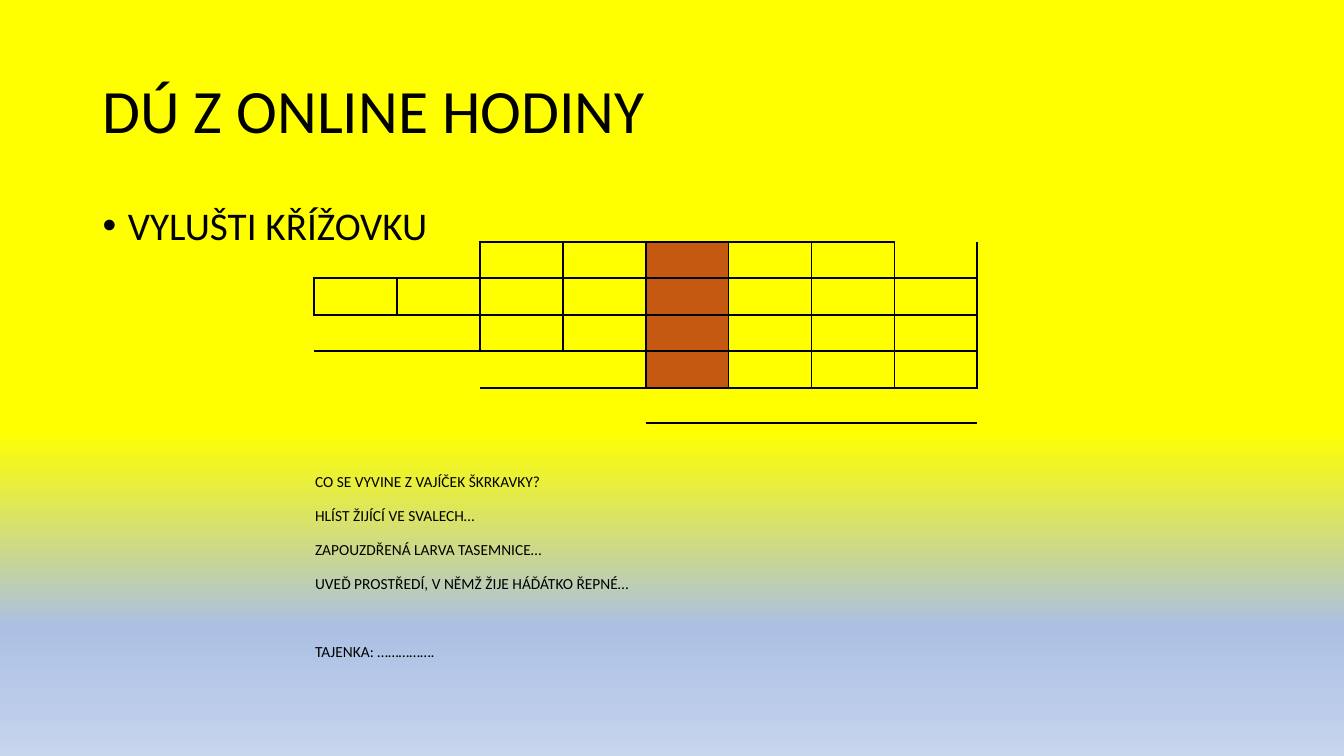
from dataclasses import dataclass

from lxml import etree
from pptx import Presentation
from pptx import util as u
from pptx.dml.color import RGBColor
from pptx.enum import text
from pptx.oxml.ns import qn


@dataclass
class Theme:
    font: str = "Calibri"
    ink: str = "000000"
    mark: str = "C65911"
    title: int = 44
    body: int = 28
    clue: int = 11
    line: float = 1.5
    sky: tuple = ((57, "FFFF00"), (83, "ABC0E4"), (92, "BACBE9"), (100, "C7D5ED"))


# Crossword: first and last answer column in each row
WORDS = [(3, 7), (1, 8), (3, 8), (5, 8)]
KEY = 5
# Clues: table row, columns merged, wording
CLUES = [
    (6, 4, "CO SE VYVINE Z VAJÍČEK ŠKRKAVKY?"),
    (7, 3, "HLÍST ŽIJÍCÍ VE SVALECH…"),
    (8, 4, "ZAPOUZDŘENÁ LARVA TASEMNICE…"),
    (9, 5, "UVEĎ PROSTŘEDÍ, V NĚMŽ ŽIJE HÁĎÁTKO ŘEPNÉ…"),
    (11, 2, "TAJENKA: ……………."),
]
COLS = [2.09] * 10
ROWS = [0.92] * 4 + [0.89] + [0.86] * 8
SIDES = {"lnL": (0, -1), "lnR": (0, 1), "lnT": (-1, 0), "lnB": (1, 0)}
PLAIN = "{2D5ABB26-0587-4C30-8999-92F81FD0307C}"


def boxed(row, col):
    return 0 <= row < len(WORDS) and WORDS[row][0] <= col <= WORDS[row][1]


class Page:
    def __init__(self, slide, theme):
        self.slide, self.theme = slide, theme

    def style(self, para, size):
        font = para.font
        font.name, font.size = self.theme.font, u.Pt(size)
        font.color.rgb = RGBColor.from_string(self.theme.ink)

    def sky(self):
        fill = self.slide.background.fill
        fill.gradient()
        fill.gradient_angle = 270
        stops = self.slide.element.find(".//" + qn("a:gsLst"))
        for old in list(stops):
            stops.remove(old)
        for pos, color in self.theme.sky:
            stop = etree.SubElement(stops, qn("a:gs"), pos=str(pos * 1000))
            etree.SubElement(stop, qn("a:srgbClr"), val=color)

    def holder(self, shape, box, words, size, anchor):
        shape.left, shape.top, shape.width, shape.height = map(u.Cm, box)
        frame = shape.text_frame
        frame.text = words
        frame.auto_size = text.MSO_AUTO_SIZE.NONE
        frame.vertical_anchor = anchor
        para = frame.paragraphs[0]
        para.alignment = text.PP_ALIGN.LEFT
        para.line_spacing = 0.9
        self.style(para, size)
        return para

    def title(self, words):
        self.holder(self.slide.shapes.title, (2.33, 1.02, 29.21, 3.68),
                    words, self.theme.title, text.MSO_ANCHOR.MIDDLE)

    def body(self, words):
        para = self.holder(self.slide.placeholders[1], (2.33, 5.07, 29.21, 12.09),
                           words, self.theme.body, text.MSO_ANCHOR.TOP)
        para.space_before = u.Pt(10)
        props = para._p.get_or_add_pPr()
        props.set("marL", str(u.Cm(0.64)))
        props.set("indent", str(u.Cm(-0.64)))

    def edges(self, cell, row, col):
        props = cell._tc.get_or_add_tcPr()
        spot = 0
        for side, (down, right) in SIDES.items():
            if boxed(row, col) or boxed(row + down, col + right):
                line = etree.Element(qn("a:" + side), w=str(u.Pt(self.theme.line)))
                fill = etree.SubElement(line, qn("a:solidFill"))
                etree.SubElement(fill, qn("a:srgbClr"), val=self.theme.ink)
                props.insert(spot, line)
                spot += 1

    def cell(self, cell, row, col):
        cell.margin_left = cell.margin_right = cell.margin_top = u.Cm(0.03)
        cell.margin_bottom = 0
        cell.vertical_anchor = text.MSO_ANCHOR.BOTTOM
        if boxed(row, col) and col == KEY:
            cell.fill.solid()
            cell.fill.fore_color.rgb = RGBColor.from_string(self.theme.mark)
        else:
            cell.fill.background()
        self.edges(cell, row, col)
        self.style(cell.text_frame.paragraphs[0], self.theme.clue)

    def puzzle(self, left, top):
        box = map(u.Cm, (left, top, sum(COLS), sum(ROWS)))
        table = self.slide.shapes.add_table(len(ROWS), len(COLS), *box).table
        table.first_row = table.horz_banding = False
        table._tbl.tblPr.find(qn("a:tableStyleId")).text = PLAIN
        for col, wide in zip(table.columns, COLS):
            col.width = u.Cm(wide)
        for row, high in zip(table.rows, ROWS):
            row.height = u.Cm(high)
        for row in range(len(ROWS)):
            for col in range(len(COLS)):
                self.cell(table.cell(row, col), row, col)
        for row, span, words in CLUES:
            first = table.cell(row, 1)
            first.merge(table.cell(row, span))
            first.text_frame.paragraphs[0].add_run().text = words


def main():
    deck = Presentation()
    deck.slide_width, deck.slide_height = u.Cm(33.87), u.Cm(19.05)
    page = Page(deck.slides.add_slide(deck.slide_layouts[1]), Theme())
    page.sky()
    page.title("DÚ Z ONLINE HODINY")
    page.body("VYLUŠTI KŘÍŽOVKU")
    page.puzzle(5.82, 6.09)
    deck.save("out.pptx")


if __name__ == "__main__":
    main()
